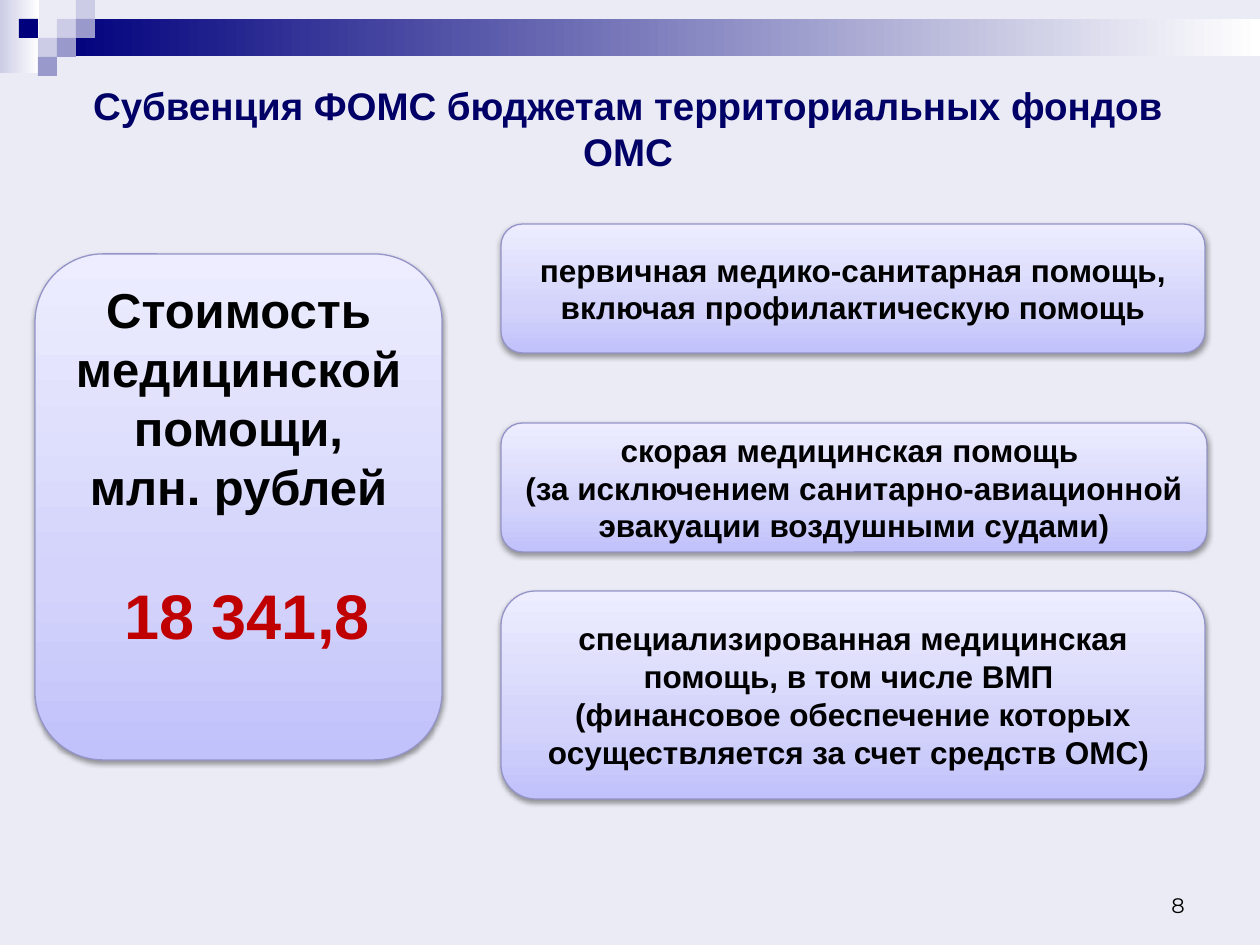
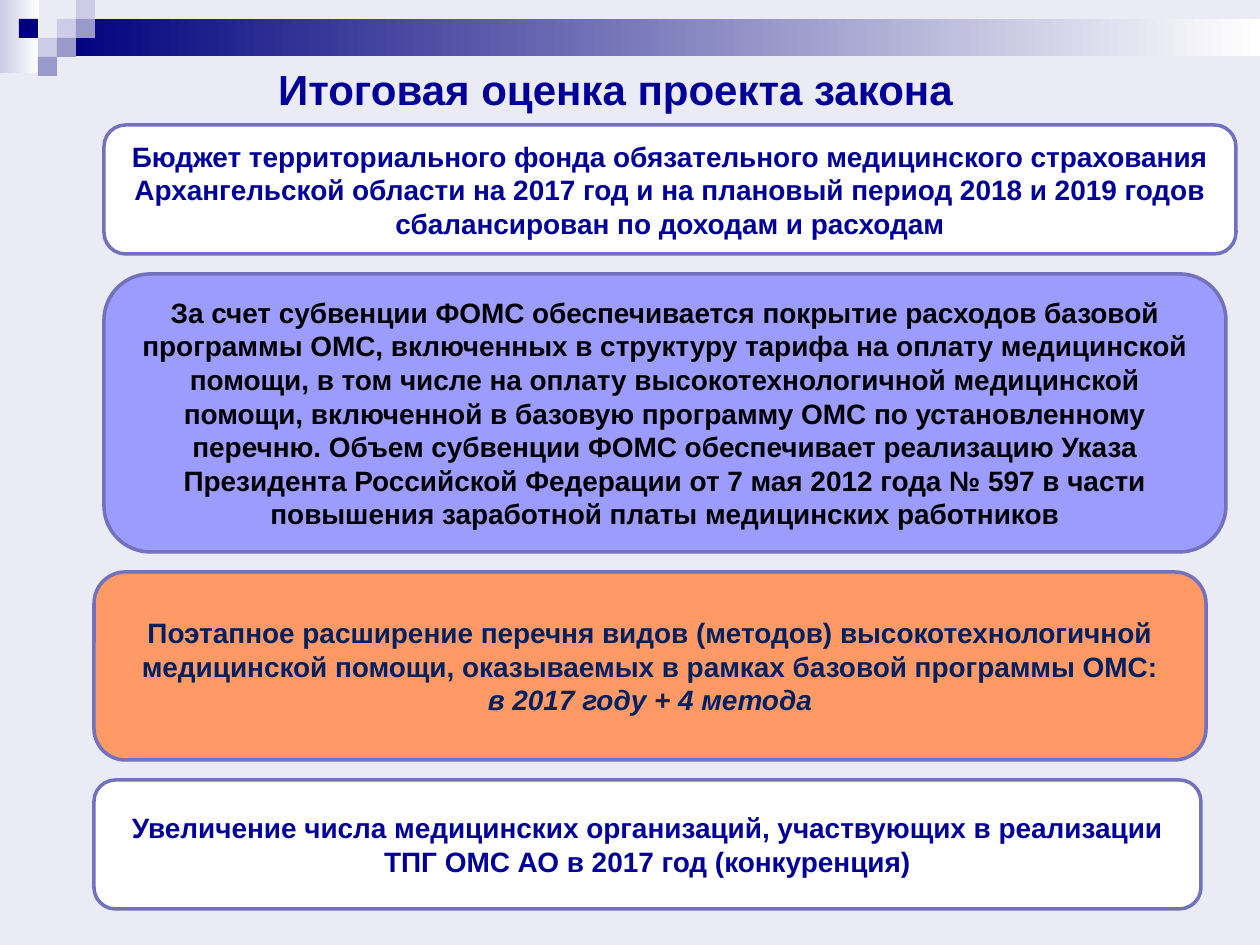
"""Builds two slides on the medical insurance fund budget."""
from pptx import Presentation
from pptx.dml.color import RGBColor
from pptx.enum.shapes import MSO_SHAPE
from pptx.enum.text import MSO_ANCHOR, PP_ALIGN
from pptx.oxml import parse_xml
from pptx.oxml.ns import nsdecls, qn
from pptx.util import Emu, Pt

HUE = {
    "page": "EBEBF5", "navy": "00007D", "pale": "CCCCE6", "mid": "9999CC",
    "white": "FFFFFF", "black": "000000", "head": "000066", "blue": "000099",
    "deep": "002060", "red": "C00000", "violet": "9C9CFF", "coral": "FF9966",
    "rim": "7171BD", "edge": "9494C9",
    "low": "C1C1FB", "soft": "D3D3FB", "high": "EDEDFF",
}
CELL = 19
BANDS = [((0, 0, 39, 73), "pale"), ((57, 19, 1203, 37), "navy")]
TILES = [(3, 1, "pale"), (4, 0, "pale"), (4, 1, "mid"), (2, 2, "pale"),
         (1, 1, "navy"), (3, 2, "mid"), (2, 3, "mid")]
GLOSS = [(0, "low"), (35, "soft"), (100, "high")]

COST = [
    "Стоимость медицинской помощи,\vмлн. рублей",
    ("18 341,8", {"size": 36, "color": "red", "before": 35, "left": 17}),
]
CARE = [
    ((501, 224, 704, 129),
     "первичная медико-санитарная помощь, включая профилактическую помощь"),
    ((501, 423, 706, 129),
     "скорая медицинская помощь \v(за исключением санитарно-авиационной "
     "эвакуации воздушными судами)"),
    ((501, 591, 704, 208),
     "специализированная медицинская помощь, в том числе ВМП \v"
     "(финансовое обеспечение которых осуществляется за счет средств ОМС) "),
]
RESULTS = [
    ((104, 125, 1132, 129), "white", "blue", [
        "Бюджет территориального фонда обязательного медицинского страхования "
        "Архангельской области на 2017 год и на плановый период 2018 и 2019 "
        "годов сбалансирован по доходам и расходам"]),
    ((104, 274, 1122, 278), "violet", "black", [
        "За счет субвенции ФОМС обеспечивается покрытие расходов базовой "
        "программы ОМС, включенных в структуру тарифа на оплату медицинской "
        "помощи, в том числе на оплату высокотехнологичной медицинской помощи, "
        "включенной в базовую программу ОМС по установленному перечню. Объем "
        "субвенции ФОМС обеспечивает реализацию Указа Президента Российской "
        "Федерации от 7 мая 2012 года № 597 в части повышения заработной платы "
        "медицинских работников"]),
    ((94, 572, 1112, 188), "coral", "deep", [
        "Поэтапное расширение перечня видов (методов) высокотехнологичной "
        "медицинской помощи, оказываемых в рамках базовой программы ОМС:",
        ("в 2017 году + 4 метода", {"italic": True})]),
    ((94, 780, 1107, 129), "white", "blue", [
        "Увеличение числа медицинских организаций, участвующих в реализации "
        "ТПГ ОМС АО в 2017 год (конкуренция)"]),
]


def px(n):
    return Emu(round(n * 914400 / 126))


def rgb(name):
    return RGBColor.from_string(HUE[name])


def write(shape, paras, anchor=MSO_ANCHOR.MIDDLE, **base):
    frame = shape.text_frame
    frame.word_wrap = True
    frame.vertical_anchor = anchor
    for i, item in enumerate(paras):
        words, extra = (item, {}) if isinstance(item, str) else item
        form = {"size": 18, "color": "black", "font": "Arial", "bold": True,
                "italic": False, "align": PP_ALIGN.CENTER, "before": 0,
                "left": 0, **base, **extra}
        para = frame.paragraphs[0] if i == 0 else frame.add_paragraph()
        para.text = words
        para.alignment = form["align"]
        para.space_before = Pt(form["before"])
        if form["left"]:
            para._p.get_or_add_pPr().set("marL", str(px(form["left"])))
        for run in para.runs:
            font = run.font
            font.name, font.size = form["font"], Pt(form["size"])
            font.bold, font.italic = form["bold"], form["italic"]
            font.color.rgb = rgb(form["color"])


def blend(shape, stops, angle):
    shape.fill.gradient()
    grad = shape._element.spPr.find(qn("a:gradFill"))
    marks = "".join(f'<a:gs pos="{pos * 1000}"><a:srgbClr val="{HUE[name]}"/></a:gs>'
                    for pos, name in stops)
    for part in list(grad):
        grad.remove(part)
    grad.append(parse_xml(f'<a:gsLst {nsdecls("a")}>{marks}</a:gsLst>'))
    grad.append(parse_xml(f'<a:lin {nsdecls("a")} ang="{angle * 60000}" scaled="0"/>'))


def block(slide, place, fill=None, line=None, width=2, kind=MSO_SHAPE.RECTANGLE):
    shape = slide.shapes.add_shape(kind, *map(px, place))
    shape.shadow.inherit = False
    if fill:
        shape.fill.solid()
        shape.fill.fore_color.rgb = rgb(fill)
    if line:
        shape.line.color.rgb = rgb(line)
        shape.line.width = Pt(width)
    else:
        shape.line.fill.background()
    return shape


def gloss(slide, place):
    shape = block(slide, place, line="edge", width=0.75,
                  kind=MSO_SHAPE.ROUNDED_RECTANGLE)
    blend(shape, GLOSS, 270)
    shape._element.spPr.find(qn("a:effectLst")).append(parse_xml(
        f'<a:outerShdw {nsdecls("a")} blurRad="{Pt(3.1)}" dist="{Pt(1.6)}" '
        f'dir="5400000" rotWithShape="0"><a:srgbClr val="{HUE["black"]}">'
        '<a:alpha val="38000"/></a:srgbClr></a:outerShdw>'))
    return shape


def label(slide, place, words, **form):
    write(slide.shapes.add_textbox(*map(px, place)), [words], **form)


def start(deck):
    slide = deck.slides.add_slide(deck.slide_layouts[6])
    for place, name in BANDS:
        blend(block(slide, place), [(0, name), (100, "white")], 0)
    for col, row, name in TILES:
        block(slide, (col * CELL, row * CELL, CELL, CELL), name)
    return slide


def main():
    deck = Presentation()
    deck.slide_width, deck.slide_height = px(1260), px(945)
    back = deck.slide_master.background.fill
    back.solid()
    back.fore_color.rgb = rgb("page")

    slide = start(deck)
    label(slide, (61, 72, 1134, 113),
          "Субвенция ФОМС бюджетам территориальных фондов ОМС",
          size=22, color="head")
    label(slide, (903, 861, 294, 63), "8", size=12, font="Montserrat",
          bold=False, align=PP_ALIGN.RIGHT, anchor=MSO_ANCHOR.BOTTOM)
    write(gloss(slide, (35, 254, 407, 506)), COST, size=28, anchor=MSO_ANCHOR.TOP)
    for place, words in CARE:
        write(gloss(slide, place), [words])

    slide = start(deck)
    label(slide, (84, 57, 1063, 63), "Итоговая оценка проекта закона",
          size=24, color="blue", anchor=MSO_ANCHOR.TOP)
    for place, fill, color, paras in RESULTS:
        shape = block(slide, place, fill, "rim", kind=MSO_SHAPE.ROUNDED_RECTANGLE)
        write(shape, paras, size=16, color=color)
    deck.save("out.pptx")


if __name__ == "__main__":
    main()
